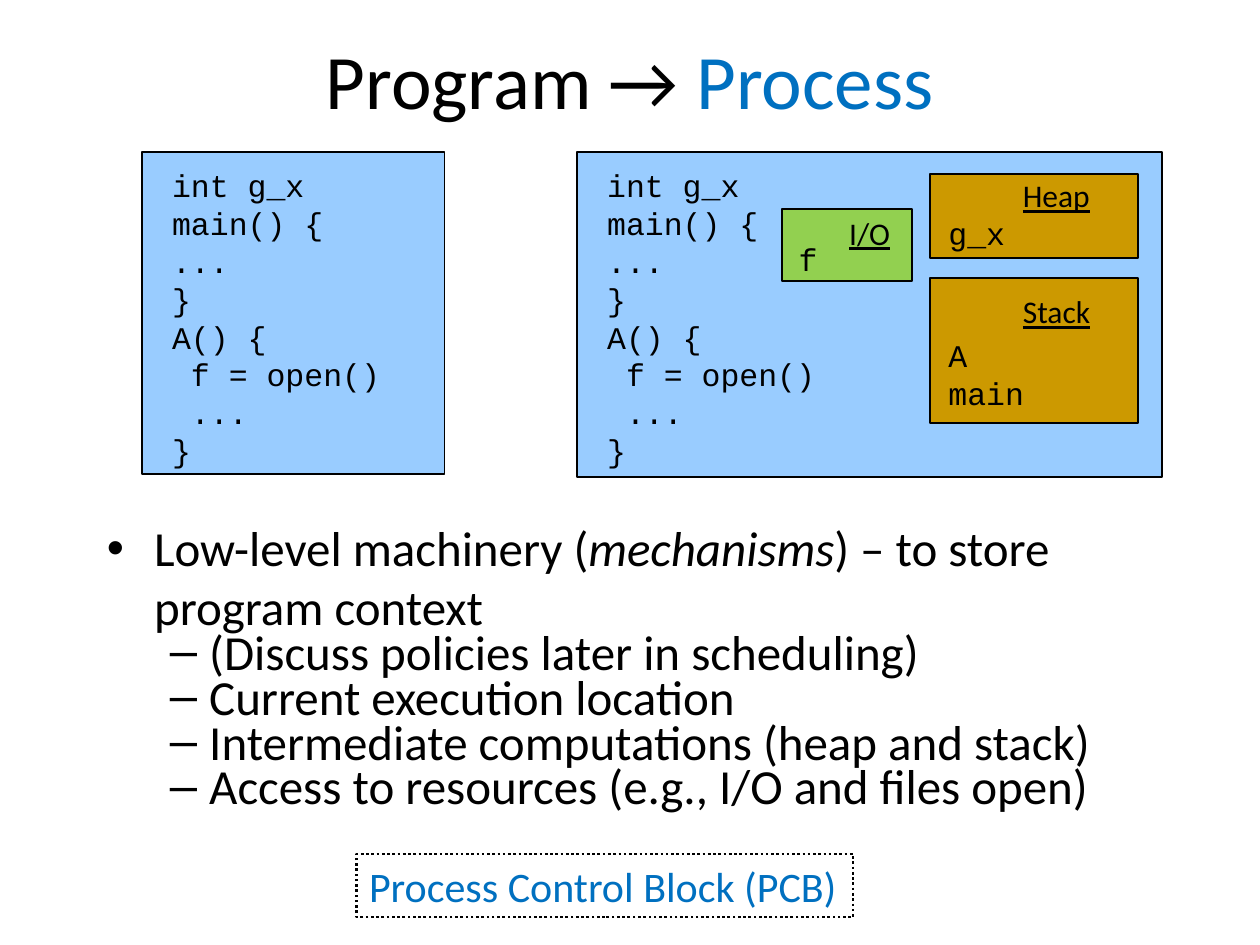
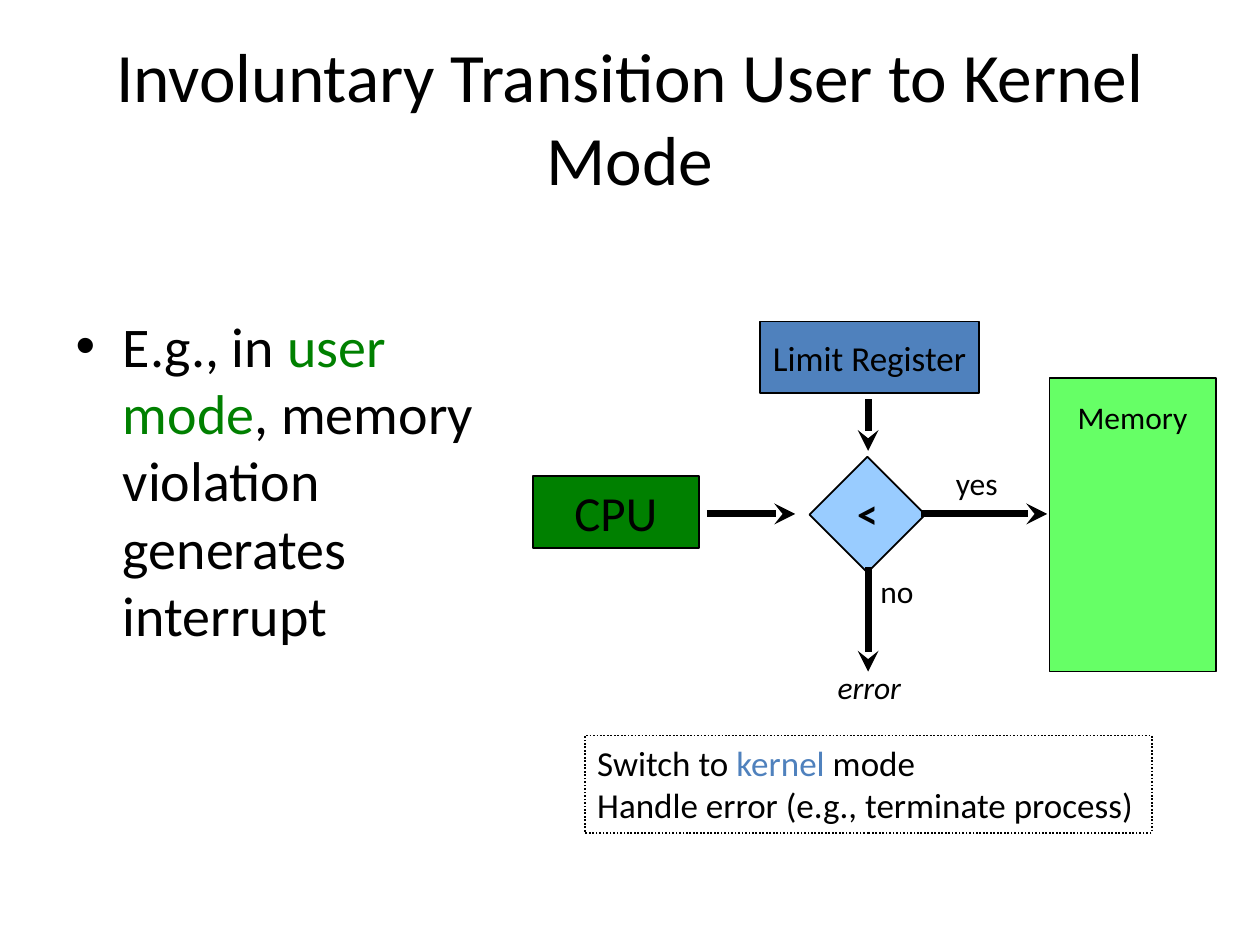
from lxml import etree
from pptx import Presentation
from pptx.dml.color import RGBColor as RGB
from pptx.enum.dml import MSO_LINE_DASH_STYLE as DASH
from pptx.enum.shapes import MSO_CONNECTOR as CONN, MSO_SHAPE as SHAPE
from pptx.enum.text import MSO_ANCHOR as ANCHOR, MSO_AUTO_SIZE as FIT, PP_ALIGN as ALIGN
from pptx.oxml.ns import qn
from pptx.util import Cm, Pt

COLORS = {
    "black": "000000", "process": "0070C0", "code": "99CCFF", "memory": "CC9900",
    "io": "92D050", "user": "008000", "kernel": "4F81BD", "ram": "66FF66",
}
RGBS = {name: RGB.from_string(value) for name, value in COLORS.items()}
SANS = {"name": "Calibri", "size": Pt(18), "color": "black"}
MONO = SANS | {"name": "Courier New"}
LABEL = SANS | {"underline": True}


def write(tf, paras, base, align=None):
    for i, runs in enumerate(paras):
        p = tf.paragraphs[0] if i == 0 else tf.add_paragraph()
        if align is not None:
            p.alignment = align
        for text, fmt in [(runs, {})] if isinstance(runs, str) else runs:
            r = p.add_run()
            r.text = text
            for key, value in (base | fmt).items():
                if key == "color":
                    r.font.color.rgb = RGBS[value]
                else:
                    setattr(r.font, key, value)


def box(shapes, at, paras=(), base=SANS, fill=None, line=None, dash=None,
        align=ALIGN.LEFT, anchor=ANCHOR.TOP):
    sp = shapes.add_shape(SHAPE.RECTANGLE, *map(Cm, at))
    sp.shadow.inherit = False
    if fill:
        sp.fill.solid()
        sp.fill.fore_color.rgb = RGBS[fill]
    else:
        sp.fill.background()
    if line:
        sp.line.color.rgb = RGBS["black"]
        sp.line.width = Pt(line)
        if dash:
            sp.line.dash_style = dash
    else:
        sp.line.fill.background()
    tf = sp.text_frame
    fit = FIT.NONE if fill else FIT.SHAPE_TO_FIT_TEXT
    frame = {"word_wrap": False, "auto_size": fit, "vertical_anchor": anchor}
    for key, value in frame.items():
        setattr(tf, key, value)
    write(tf, paras, base, align)
    return sp


prs = Presentation()
prs.slide_width, prs.slide_height = Cm(25.4), Cm(19.05)

pages = [
    {
        "title": [[("Program → ", {}), ("Process", {"color": "process"})]],
        "title_at": (1.9, 0, 21.59, 3.18), "title_size": 44,
        "body": [
            [("Low-level machinery (", {}), ("mechanisms", {"italic": True}),
             (") – to store program context", {})],
            "(Discuss policies later in scheduling)",
            "Current execution location",
            "Intermediate computations (heap and stack)",
            "Access to resources (e.g., I/O and files open)",
        ],
        "body_at": (1.9, 10.31, 21.59, 8.1), "body_size": 28,
    },
    {
        "title": ["Involuntary Transition User to Kernel Mode"],
        "title_at": (1.27, 0.76, 22.86, 3.18), "title_size": 39.6,
        "body": [[("E.g., in ", {}), ("user mode", {"color": "user"}),
                  (", memory violation generates interrupt", {})]],
        "body_at": (1.27, 6.15, 9.47, 10.87), "body_size": 32,
    },
]
slides = []
for page in pages:
    s = prs.slides.add_slide(prs.slide_layouts[1])
    for sp, part in zip(s.placeholders, ("title", "body")):
        sp.left, sp.top, sp.width, sp.height = map(Cm, page[part + "_at"])
        tf = sp.text_frame
        tf.auto_size = FIT.NONE
        write(tf, page[part], SANS | {"size": Pt(page[part + "_size"])})
    for p in tf.paragraphs[1:]:
        p.level = 1
        p.line_spacing = Pt(20)
    slides.append(s)

program_slide, interrupt_slide = slides

code = ["int g_x", "main() {", "...", "}", "A() {", " f = open()", " ...", "}"]
for left, width, height in [(2.86, 6.1, 6.48), (11.63, 11.79, 6.55)]:
    group = program_slide.shapes.add_group_shape().shapes
    box(group, (left, 3.07, width, height), fill="code", line=1)
    box(group, (left + 0.36, 3.23, 4.72, 6.43), code, MONO)

areas = [
    ("Heap", "memory", (18.75, 3.51, 4.19, 1.7), (20.37, 3.43, 1.88, 1.02),
     ["g_x"], (18.87, 4.19, 1.65, 1.02)),
    ("Stack", "memory", (18.75, 5.61, 4.19, 2.92), (20.37, 5.77, 1.88, 1.02),
     ["A", "main"], (18.87, 6.65, 2.54, 2.29)),
    ("I/O", "io", (15.77, 4.22, 2.62, 1.45), (16.87, 4.19, 1.35, 1.02),
     ["f"], (15.85, 4.72, 0.89, 1.02)),
]
for name, fill, area_at, name_at, values, values_at in areas:
    box(group, area_at, fill=fill, line=1)
    box(group, name_at, [name], LABEL)
    box(group, values_at, values, MONO)

box(program_slide.shapes, (7.19, 17.22, 10.01, 1.27), ["Process Control Block (PCB)"],
    SANS | {"size": Pt(24), "color": "process"}, line=1.5, dash=DASH.ROUND_DOT)

shapes = interrupt_slide.shapes
for text, at, size, fill in [
    ("CPU", (10.74, 9.6, 3.35, 1.45), 28, "user"),
    ("Limit Register", (15.32, 6.48, 4.42, 1.45), 20, "kernel"),
]:
    box(shapes, at, [text], SANS | {"size": Pt(size)}, fill, 1,
        align=ALIGN.CENTER, anchor=ANCHOR.MIDDLE)
check = box(shapes, (16.66, 9.55, 1.65, 1.65), fill="code", line=1)
check.rotation = 45
box(shapes, (21.16, 7.62, 3.35, 5.92), fill="ram", line=1)

for text, at, fmt, align in [
    ("<", (17.02, 9.7, 0.94, 1.3), {"size": Pt(24), "bold": True}, ALIGN.CENTER),
    ("error", (16.61, 13.34, 1.83, 1.02), {"italic": True}, ALIGN.CENTER),
    ("Memory", (21.46, 7.9, 2.74, 1.02), {}, ALIGN.CENTER),
    ("no", (17.5, 11.4, 1.35, 1.27), {}, ALIGN.LEFT),
    ("yes", (19.02, 9.22, 1.65, 1.27), {}, ALIGN.LEFT),
]:
    box(shapes, at, [text], SANS | fmt, align=align)

for ends in [
    (14.25, 10.36, 16.03, 10.36),
    (18.57, 10.36, 21.11, 10.36),
    (17.5, 8.05, 17.5, 9.09),
    (17.5, 11.43, 17.5, 13.54),
]:
    arrow = shapes.add_connector(CONN.STRAIGHT, *map(Cm, ends))
    arrow.line.color.rgb = RGBS["black"]
    arrow.line.width = Pt(4)
    sp_pr = arrow.element.spPr
    etree.SubElement(sp_pr.find(qn("a:ln")), qn("a:tailEnd"), type="stealth")
    etree.SubElement(sp_pr, qn("a:effectLst"))

box(shapes, (11.79, 14.83, 11.43, 1.96), [
    [("Switch to ", {}), ("kernel", {"color": "kernel"}), (" mode", {})],
    "Handle error (e.g., terminate process)",
], SANS | {"size": Pt(20)}, line=1, dash=DASH.ROUND_DOT)

prs.save("out.pptx")
